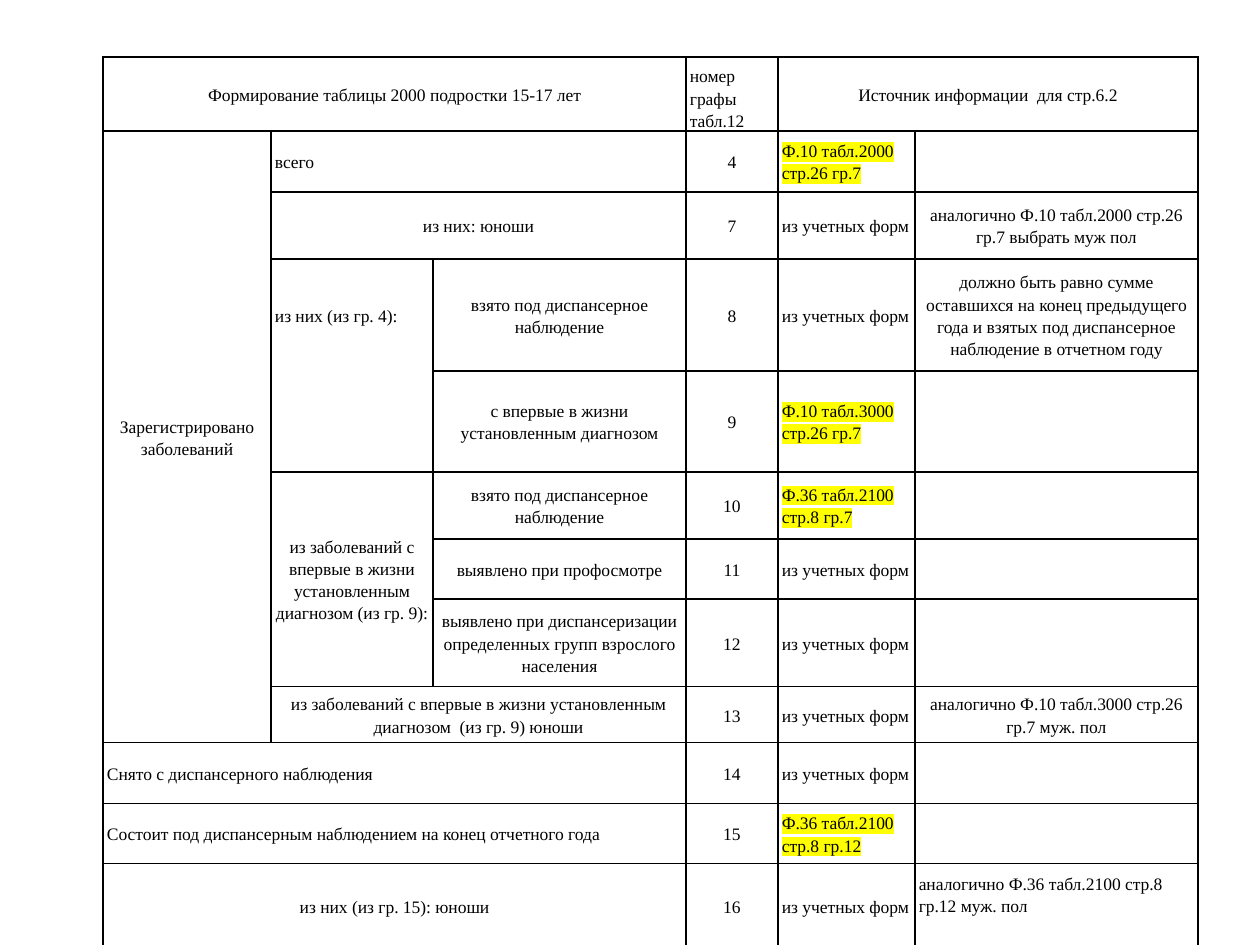
import pptx
import pptx.dml.color
import pptx.enum.text
import pptx.oxml
import pptx.oxml.ns
import pptx.util
from dataclasses import dataclass

ALIGN = pptx.enum.text.PP_ALIGN
ANCHOR = pptx.enum.text.MSO_ANCHOR


@dataclass(frozen=True)
class Theme:
    font: str = "Times New Roman"
    size: int = 10
    ink: str = "000000"
    marker: str = "FFFF00"
    border: int = 1
    line_spacing: float = 1.15
    space_before: int = 6


THEME = Theme()
PX_PER_INCH = 126
LEFT, TOP = 103, 57
COLUMNS = [168, 162, 253, 92, 137, 283]
ROWS = [74, 61, 67, 112, 101, 67, 60, 88, 56, 61, 60, 86]
INSET = 4
LAST_NOTE_GAP = 33

# First and last cell of each merged block, as (row, column)
MERGES = [
    ((0, 0), (0, 2)), ((0, 4), (0, 5)), ((1, 0), (8, 0)),
    ((1, 1), (1, 2)), ((2, 1), (2, 2)), ((5, 1), (7, 1)),
    ((8, 1), (8, 2)), ((9, 0), (9, 2)), ((10, 0), (10, 2)), ((11, 0), (11, 2)),
]
# The two cells of "из них (из гр. 4)" share an edge without a line
OPEN_EDGES = {(3, 1): "B", (4, 1): "T"}

CENTERED = {
    (0, 0): "Формирование таблицы 2000 подростки 15-17 лет",
    (0, 4): "Источник информации  для стр.6.2",
    (1, 0): "Зарегистрировано заболеваний",
    (2, 1): "из них: юноши",
    (3, 2): "взято под диспансерное наблюдение",
    (4, 2): "с впервые в жизни установленным диагнозом",
    (5, 1): "из заболеваний с впервые в жизни установленным диагнозом (из гр. 9):",
    (5, 2): "взято под диспансерное наблюдение",
    (6, 2): "выявлено при профосмотре",
    (7, 2): "выявлено при диспансеризации определенных групп взрослого населения",
    (8, 1): "из заболеваний с впервые в жизни установленным диагнозом  (из гр. 9) юноши",
    (11, 0): "из них (из гр. 15): юноши",
    (2, 5): "аналогично Ф.10 табл.2000 стр.26 гр.7 выбрать муж пол",
    (3, 5): "должно быть равно сумме оставшихся на конец предыдущего года "
            "и взятых под диспансерное наблюдение в отчетном году",
    (8, 5): "аналогично Ф.10 табл.3000 стр.26 гр.7 муж. пол",
}
LEFT_ALIGNED = {
    (1, 1): "всего",
    (3, 1): "из них (из гр. 4):",
    (9, 0): "Снято с диспансерного наблюдения",
    (10, 0): "Состоит под диспансерным наблюдением на конец отчетного года",
}
GRAPH_NUMBERS = [4, *range(7, 17)]
FORM_SOURCES = {
    1: "Ф.10 табл.2000 стр.26 гр.7",
    4: "Ф.10 табл.3000 стр.26 гр.7",
    5: "Ф.36 табл.2100 стр.8 гр.7",
    10: "Ф.36 табл.2100 стр.8 гр.12",
}


def px(n):
    return pptx.util.Emu(round(n * 914400 / PX_PER_INCH))


def highlight(r, color):
    mark = pptx.oxml.parse_xml(
        f'<a:highlight {pptx.oxml.ns.nsdecls("a")}><a:srgbClr val="{color}"/></a:highlight>')
    fill = r._r.get_or_add_rPr().find(pptx.oxml.ns.qn("a:solidFill"))
    fill.addnext(mark)


def write(cell, text, align=ALIGN.LEFT, anchor=ANCHOR.MIDDLE, marker=None, bottom=0):
    cell.vertical_anchor = anchor
    cell.margin_bottom = px(bottom)
    p = cell.text_frame.paragraphs[0]
    p.alignment = align
    p.line_spacing = THEME.line_spacing
    p.space_before = pptx.util.Pt(THEME.space_before)
    r = p.add_run()
    r.text = text
    r.font.name = THEME.font
    r.font.size = pptx.util.Pt(THEME.size)
    r.font.bold = False
    r.font.color.rgb = pptx.dml.color.RGBColor.from_string(THEME.ink)
    if marker:
        highlight(r, marker)


def set_borders(cell, open_edge=None):
    tc_pr = cell._tc.get_or_add_tcPr()
    width = pptx.util.Pt(THEME.border)
    for i, side in enumerate("LRTB"):
        paint = ("<a:noFill/>" if side == open_edge else
                 f'<a:solidFill><a:srgbClr val="{THEME.ink}"/></a:solidFill>')
        tc_pr.insert(i, pptx.oxml.parse_xml(
            f'<a:ln{side} {pptx.oxml.ns.nsdecls("a")} w="{width}">{paint}</a:ln{side}>'))


def add_grid(s):
    frame = s.shapes.add_table(len(ROWS), len(COLUMNS), px(LEFT), px(TOP),
                               px(sum(COLUMNS)), px(sum(ROWS)))
    table = frame.table
    table.first_row = table.horz_banding = False
    for column, width in zip(table.columns, COLUMNS):
        column.width = px(width)
    for row, height in zip(table.rows, ROWS):
        row.height = px(height)
    for i in range(len(ROWS)):
        for j in range(len(COLUMNS)):
            cell = table.cell(i, j)
            cell.margin_left = cell.margin_right = px(INSET)
            cell.margin_top = cell.margin_bottom = 0
            cell.fill.background()
            set_borders(cell, OPEN_EDGES.get((i, j)))
    for first, last in MERGES:
        table.cell(*first).merge(table.cell(*last))
    return table


def fill_table(table):
    for place, text in CENTERED.items():
        write(table.cell(*place), text, align=ALIGN.CENTER)
    for place, text in LEFT_ALIGNED.items():
        write(table.cell(*place), text)
    for i, number in enumerate(GRAPH_NUMBERS, start=1):
        write(table.cell(i, 3), str(number), align=ALIGN.CENTER)
        write(table.cell(i, 4), FORM_SOURCES.get(i, "из учетных форм"),
              marker=THEME.marker if i in FORM_SOURCES else None)
    write(table.cell(0, 3), "номер графы табл.12", anchor=ANCHOR.BOTTOM)
    write(table.cell(11, 5), "аналогично Ф.36 табл.2100 стр.8 гр.12 муж. пол",
          anchor=ANCHOR.BOTTOM, bottom=LAST_NOTE_GAP)


def main():
    prs = pptx.Presentation()
    prs.slide_width, prs.slide_height = px(1260), px(945)
    s = prs.slides.add_slide(prs.slide_layouts[6])
    fill_table(add_grid(s))
    prs.save("out.pptx")


if __name__ == "__main__":
    main()
